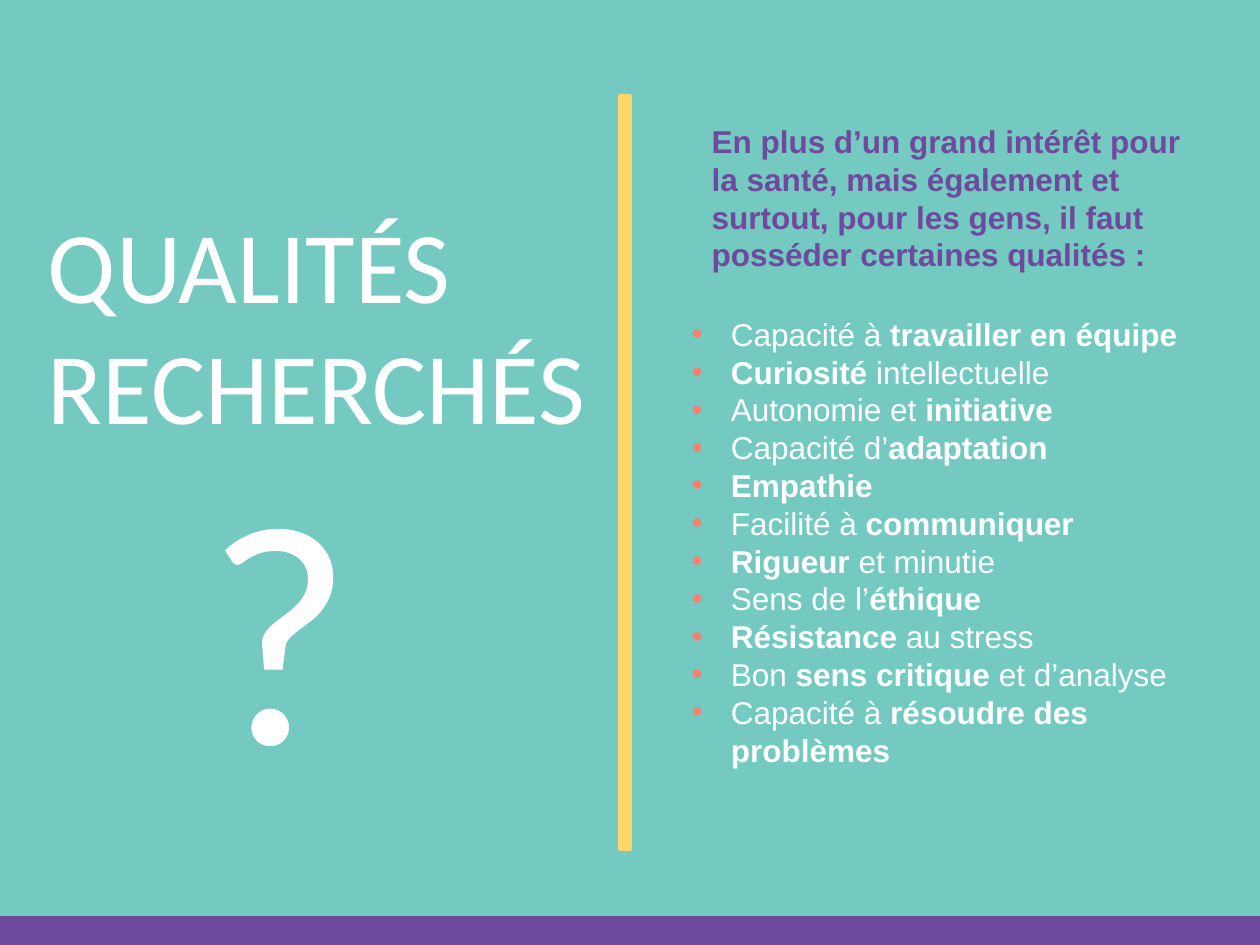
from lxml import etree
from pptx import Presentation
from pptx.dml.color import RGBColor
from pptx.enum.shapes import MSO_SHAPE
from pptx.enum.text import MSO_ANCHOR, MSO_AUTO_SIZE, PP_ALIGN
from pptx.oxml.ns import qn
from pptx.util import Pt

RECT = MSO_SHAPE.RECTANGLE
TOP = MSO_ANCHOR.TOP
GROW = MSO_AUTO_SIZE.SHAPE_TO_FIT_TEXT
LEFT = PP_ALIGN.LEFT

WIDTH, HEIGHT = 720, 540
INDENT = 22.5
COLORS = {
    "teal": "74CAC1",
    "yellow": "FED669",
    "purple": "6E499D",
    "coral": "F4806F",
    "white": "FFFFFF",
}

# Asterisks enclose the bold words
SKILLS = [
    "Capacité à *travailler en équipe*",
    "*Curiosité* intellectuelle",
    "Autonomie et *initiative*",
    "Capacité d’*adaptation*",
    "*Empathie*",
    "Facilité à *communiquer*",
    "*Rigueur* et minutie",
    "Sens de l’*éthique*",
    "*Résistance* au stress",
    "Bon *sens critique *et d’analyse",
    "Capacité à *résoudre des problèmes*",
]
INTRO = ("En plus d’un grand intérêt pour la santé, mais également et surtout, "
         "pour les gens, il faut posséder certaines qualités :")


class Page:
    head = "Calibri"
    body = "Arial"

    def __init__(self, slide):
        self.slide = slide

    def color(self, name):
        return RGBColor.from_string(COLORS[name])

    def rect(self, box, name):
        shape = self.slide.shapes.add_shape(RECT, *map(Pt, box))
        shape.shadow.inherit = False
        shape.fill.solid()
        shape.fill.fore_color.rgb = self.color(name)
        shape.line.color.rgb = self.color(name)
        shape.line.width = Pt(2)

    def style(self, run, font, size, name, bold=False):
        run.font.name = font
        run.font.size = Pt(size)
        run.font.bold = bold
        run.font.color.rgb = self.color(name)

    def frame(self, shape):
        frame = shape.text_frame
        frame.word_wrap = True
        frame.auto_size = GROW
        frame.vertical_anchor = TOP
        return frame

    def box(self, box):
        return self.frame(self.slide.shapes.add_textbox(*map(Pt, box)))

    def title(self, box, text, size):
        shape = self.slide.shapes.title
        shape.left, shape.top, shape.width, shape.height = map(Pt, box)
        # Bring the title in front of the backdrop
        self.slide.shapes._spTree.append(shape._element)
        frame = self.frame(shape)
        frame.text = text
        frame.paragraphs[0].alignment = LEFT
        self.style(frame.paragraphs[0].runs[0], self.head, size, "white")

    def text(self, box, text, font, size, name, bold=False):
        frame = self.box(box)
        frame.text = text
        self.style(frame.paragraphs[0].runs[0], font, size, name, bold)

    def bullet(self, para):
        props = para._p.get_or_add_pPr()
        props.set("marL", str(Pt(INDENT)))
        props.set("indent", str(-Pt(INDENT)))
        tint = etree.SubElement(props, qn("a:buClr"))
        etree.SubElement(tint, qn("a:srgbClr"), val=COLORS["coral"])
        etree.SubElement(props, qn("a:buFont"), typeface=self.body)
        etree.SubElement(props, qn("a:buChar"), char="•")

    def bullets(self, box, items, size, name):
        frame = self.box(box)
        for i, item in enumerate(items):
            para = frame.add_paragraph() if i else frame.paragraphs[0]
            self.bullet(para)
            for j, part in enumerate(item.split("*")):
                if part:
                    run = para.add_run()
                    run.text = part
                    self.style(run, self.body, size, name, j % 2 == 1)


def main():
    deck = Presentation()
    deck.slide_width, deck.slide_height = Pt(WIDTH), Pt(HEIGHT)
    page = Page(deck.slides.add_slide(deck.slide_layouts[5]))

    # Backdrop and divider
    page.rect((0, 0, WIDTH, HEIGHT), "teal")
    page.rect((354.2, 54.7, 5.8, 430.6), "yellow")

    # Left side: title and question mark
    page.title((20.2, 111.6, 329, 147.6), "QUALITÉS RECHERCHÉS", 58)
    page.text((110.9, 241.9, 96.5, 225.4), "?", page.head, 180, "white")

    # Right side: list, footer band and introduction
    page.bullets((388.1, 176.4, 311.8, 290.9), SKILLS, 18, "white")
    page.rect((0, 524.2, WIDTH, 15.8), "purple")
    page.text((399.6, 66.2, 283.7, 94.3), INTRO, page.body, 18, "purple", True)

    deck.save("out.pptx")


if __name__ == "__main__":
    main()
